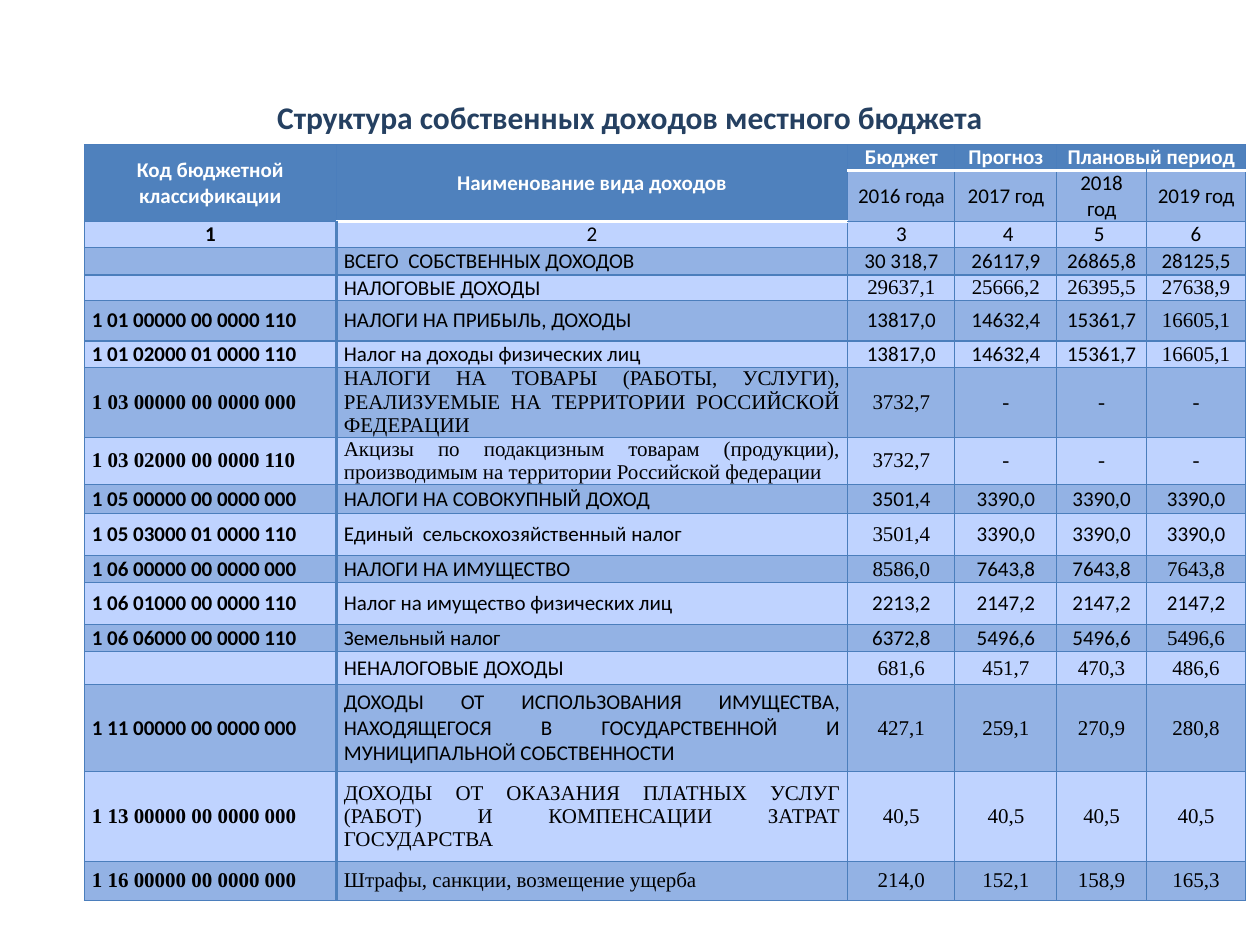
from lxml.etree import SubElement
from pptx import Presentation
from pptx.dml.color import RGBColor
from pptx.enum.text import MSO_ANCHOR as ANCHOR, PP_ALIGN as ALIGN
from pptx.oxml.ns import qn
from pptx.util import Pt

COLORS = {
    "title": "254061", "header": "4F81BD", "dark": "93B2E4", "light": "BFD3FF",
    "grid": "4B7EBC", "white": "FFFFFF", "black": "000000",
}
FONTS = {"C": "Calibri", "T": "Times New Roman"}
TITLE = "Структура собственных доходов местного бюджета"
COL_WIDTHS = [144, 292.3, 61.2, 58.3, 51.1, 56.9]

ROWS = [
    (14.6, "CCCCCC", ["Код бюджетной классификации", "Наименование вида доходов",
                      "Бюджет", "Прогноз", "Плановый период", ""]),
    (29.2, "CCCCCC", ["", "", "2016 года", "2017 год", "2018 год", "2019 год"]),
    (14.6, "CCCCCC", ["1", "2", "3", " 4", "5 ", "6"]),
    (15.8, "CCCCCC", ["", "ВСЕГО  СОБСТВЕННЫХ ДОХОДОВ",
                      "30 318,7", "26117,9", "26865,8", "28125,5"]),
    (14.6, "CCTTTT", ["", "НАЛОГОВЫЕ ДОХОДЫ", "29637,1", "25666,2", "26395,5", "27638,9"]),
    (23, "CCCCCT", ["1 01 00000 00 0000 110", "НАЛОГИ НА ПРИБЫЛЬ, ДОХОДЫ",
                    "13817,0", "14632,4", "15361,7", "16605,1"]),
    (15, "CCCCCT", ["1 01 02000 01 0000 110", "Налог на доходы физических лиц",
                    "13817,0", "14632,4", "15361,7", "16605,1"]),
    (40, "TTTTTT", ["1 03 00000 00 0000 000",
                    "НАЛОГИ НА ТОВАРЫ (РАБОТЫ, УСЛУГИ), РЕАЛИЗУЕМЫЕ НА ТЕРРИТОРИИ "
                    "РОССИЙСКОЙ ФЕДЕРАЦИИ", "3732,7", "-", "-", "-"]),
    (27, "TTTTTT", ["1 03 02000 00 0000 110",
                    "Акцизы по подакцизным товарам (продукции), производимым на территории "
                    "Российской федерации", "3732,7", "-", "-", "-"]),
    (16.7, "CCCCCC", ["1 05 00000 00 0000 000", "НАЛОГИ НА СОВОКУПНЫЙ ДОХОД",
                      "3501,4", "3390,0", "3390,0", "3390,0"]),
    (24, "CCTCCC", ["1 05 03000 01 0000 110", "Единый  сельскохозяйственный налог",
                    "3501,4", "3390,0", "3390,0", "3390,0"]),
    (15.4, "CCTCCT", ["1 06 00000 00 0000 000", "НАЛОГИ НА ИМУЩЕСТВО",
                      "8586,0", "7643,8", "7643,8", "7643,8"]),
    (24, "CCCCCC", ["1 06 01000 00 0000 110", "Налог на имущество физических лиц",
                    "2213,2", "2147,2", "2147,2", "2147,2"]),
    (15.4, "CCCCCT", ["1 06 06000 00 0000 110", "Земельный налог",
                      "6372,8", "5496,6", "5496,6", "5496,6"]),
    (19, "CCTTTT", ["", "НЕНАЛОГОВЫЕ ДОХОДЫ", "681,6", "451,7", "470,3", "486,6"]),
    (49.7, "CCTTTT", ["1 11 00000 00 0000 000",
                      "ДОХОДЫ ОТ ИСПОЛЬЗОВАНИЯ ИМУЩЕСТВА, НАХОДЯЩЕГОСЯ В ГОСУДАРСТВЕННОЙ "
                      "И МУНИЦИПАЛЬНОЙ СОБСТВЕННОСТИ", "427,1", "259,1", "270,9", "280,8"]),
    (51.2, "TTTTTT", ["1 13 00000 00 0000 000",
                      "ДОХОДЫ ОТ ОКАЗАНИЯ ПЛАТНЫХ УСЛУГ (РАБОТ) И КОМПЕНСАЦИИ ЗАТРАТ "
                      "ГОСУДАРСТВА", "40,5", "40,5", "40,5", "40,5"]),
    (22.4, "TTTTTT", ["1 16 00000 00 0000 000", "Штрафы, санкции, возмещение ущерба",
                      "214,0", "152,1", "158,9", "165,3"]),
]


def rgb(name):
    return RGBColor.from_string(COLORS[name])


def style_run(r, size, font, color, bold):
    r.font.size, r.font.name, r.font.bold = Pt(size), font, bold
    r.font.color.rgb = rgb(color)


def add_borders(cell, row, col):
    edges = {side: ("grid", 0.75) for side in "LRTB"}
    white = ("white", 2)
    thick = ("header", 2)
    if (row == 0 and col > 1) or (row == 1 and col == 1):
        edges["B"] = white
    if (row == 1 and col > 1) or (row == 2 and col == 1):
        edges["T"] = white
    if row > 1 and col == 0:
        edges["R"] = thick
    if row > 1 and col == 1:
        edges["L"] = thick
    tc_pr = cell._tc.get_or_add_tcPr()
    for side, (color, width) in edges.items():
        ln = SubElement(tc_pr, qn(f"a:ln{side}"), w=str(Pt(width)))
        fill = SubElement(ln, qn("a:solidFill"))
        SubElement(fill, qn("a:srgbClr"), val=COLORS[color])


def fill_cell(cell, row, col, text, font):
    header = row == 0 or (row == 1 and col < 2)
    add_borders(cell, row, col)
    cell.fill.solid()
    cell.fill.fore_color.rgb = rgb("header" if header else "dark" if row % 2 else "light")
    cell.margin_left = cell.margin_right = Pt(4.32)
    cell.margin_top = cell.margin_bottom = 0
    bottom = row == 2 or (row == 0 and col > 2)
    cell.vertical_anchor = ANCHOR.BOTTOM if bottom else ANCHOR.MIDDLE
    p = cell.text_frame.paragraphs[0]
    p.alignment = ALIGN.JUSTIFY if row > 2 and col < 2 else ALIGN.CENTER
    if not text:
        p._p.get_or_add_endParaRPr().set("sz", "1200")
        return
    p.text = text
    style_run(p.runs[0], 12, FONTS[font], "white" if header else "black", header or col == 0)


def main():
    prs = Presentation()
    prs.slide_width, prs.slide_height = Pt(720), Pt(540)
    s = prs.slides.add_slide(prs.slide_layouts[5])

    title = s.shapes.title
    title.left, title.top, title.width, title.height = Pt(36), Pt(21.6), Pt(648), Pt(90)
    tf = title.text_frame
    tf.text = TITLE
    tf.vertical_anchor = ANCHOR.MIDDLE
    tf.paragraphs[0].alignment = ALIGN.CENTER
    style_run(tf.paragraphs[0].runs[0], 18, FONTS["C"], "title", True)

    height = sum(row[0] for row in ROWS)
    table = s.shapes.add_table(len(ROWS), len(COL_WIDTHS), Pt(48.2), Pt(82.8),
                               Pt(sum(COL_WIDTHS)), Pt(height)).table
    for column, width in zip(table.columns, COL_WIDTHS):
        column.width = Pt(width)
    for i, (row_height, fonts, texts) in enumerate(ROWS):
        table.rows[i].height = Pt(row_height)
        for j, (text, font) in enumerate(zip(texts, fonts)):
            fill_cell(table.cell(i, j), i, j, text, font)
    for first, last in [((0, 0), (1, 0)), ((0, 1), (1, 1)), ((0, 4), (0, 5))]:
        table.cell(*first).merge(table.cell(*last))

    prs.save("out.pptx")


if __name__ == "__main__":
    main()
